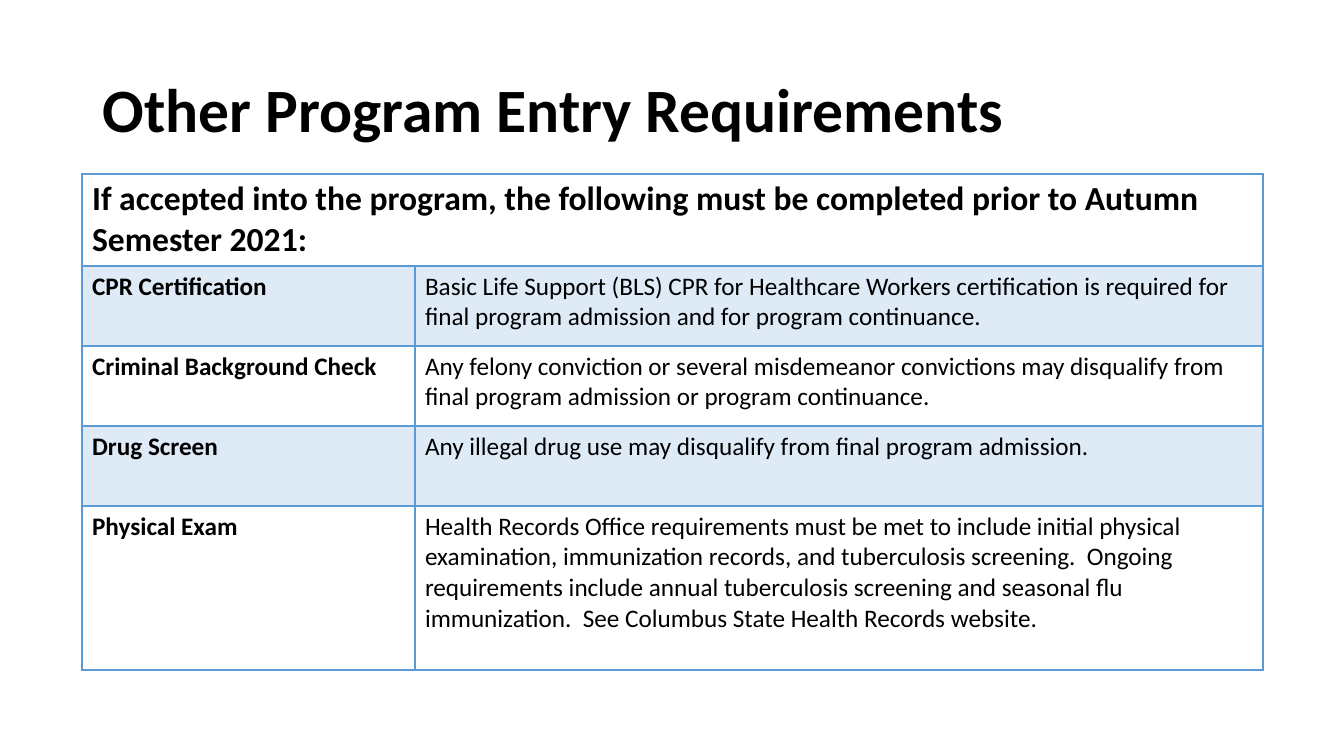
from lxml.etree import SubElement
from pptx import Presentation
from pptx.dml.color import RGBColor
from pptx.enum.text import MSO_ANCHOR
from pptx.oxml.ns import qn
from pptx.util import Pt

EMU_PER_PX = 9072
BLACK = RGBColor(0x00, 0x00, 0x00)
WHITE = RGBColor(0xFF, 0xFF, 0xFF)
BORDER_BLUE = RGBColor(0x5B, 0x9B, 0xD5)
BAND_BLUE = RGBColor(0xDE, 0xEB, 0xF7)

HEADING = ("If accepted into the program, the following must be completed "
           "prior to Autumn Semester 2021:")
REQUIREMENTS = [
    ("CPR Certification",
     "Basic Life Support (BLS) CPR for Healthcare Workers certification is "
     "required for final program admission and for program continuance."),
    ("Criminal Background Check",
     "Any felony conviction or several misdemeanor convictions may disqualify "
     "from final program admission or program continuance."),
    ("Drug Screen",
     "Any illegal drug use may disqualify from final program admission."),
    ("Physical Exam",
     "Health Records Office requirements must be met to include initial "
     "physical examination, immunization records, and tuberculosis screening.  "
     "Ongoing requirements include annual tuberculosis screening and seasonal "
     "flu immunization.  See Columbus State Health Records website."),
]
COLUMN_WIDTHS = [333, 848]
ROW_HEIGHTS = [92, 80, 80, 80, 164]


def px(length):
    return length * EMU_PER_PX


def write_text(frame, text, size=18, bold=False, color=BLACK, line_spacing=None):
    frame.word_wrap = True
    paragraph = frame.paragraphs[0]
    paragraph.line_spacing = line_spacing
    run = paragraph.add_run()
    run.text = text
    run.font.name = "Calibri"
    run.font.size = Pt(size)
    run.font.bold = bold
    run.font.color.rgb = color


def add_title(slide, text):
    title = slide.shapes.add_textbox(px(93), px(40), px(1159), px(146))
    title.text_frame.vertical_anchor = MSO_ANCHOR.MIDDLE
    write_text(title.text_frame, text, size=44, bold=True, line_spacing=0.9)


def style_cell(cell, fill, **border_widths):
    """Border widths are points by side (L, R, T, B), 1 where not given."""
    properties = cell._tc.get_or_add_tcPr()
    for side in "LRTB":
        width = Pt(border_widths.get(side, 1))
        line = SubElement(properties, qn(f"a:ln{side}"), w=str(width))
        solid = SubElement(line, qn("a:solidFill"))
        SubElement(solid, qn("a:srgbClr"), val=str(BORDER_BLUE))
    cell.fill.solid()
    cell.fill.fore_color.rgb = fill


def add_requirements_table(slide):
    table = slide.shapes.add_table(
        len(ROW_HEIGHTS), len(COLUMN_WIDTHS), px(82), px(174),
        px(sum(COLUMN_WIDTHS)), px(sum(ROW_HEIGHTS))).table
    for column, width in zip(table.columns, COLUMN_WIDTHS):
        column.width = px(width)
    for row, height in zip(table.rows, ROW_HEIGHTS):
        row.height = px(height)

    for heading_cell in table.rows[0].cells:
        style_cell(heading_cell, WHITE, B=2)
    table.cell(0, 0).merge(table.cell(0, 1))
    write_text(table.cell(0, 0).text_frame, HEADING, size=24, bold=True)

    for row_number, requirement in enumerate(REQUIREMENTS, start=1):
        fill = BAND_BLUE if row_number % 2 else WHITE
        top_width = 2 if row_number == 1 else 1
        for column_number, text in enumerate(requirement):
            cell = table.cell(row_number, column_number)
            style_cell(cell, fill, T=top_width)
            write_text(cell.text_frame, text, bold=column_number == 0)


def main():
    presentation = Presentation()
    presentation.slide_width = px(1344)
    presentation.slide_height = px(756)
    slide = presentation.slides.add_slide(presentation.slide_layouts[6])
    add_title(slide, "Other Program Entry Requirements")
    add_requirements_table(slide)
    presentation.save("out.pptx")


if __name__ == "__main__":
    main()
